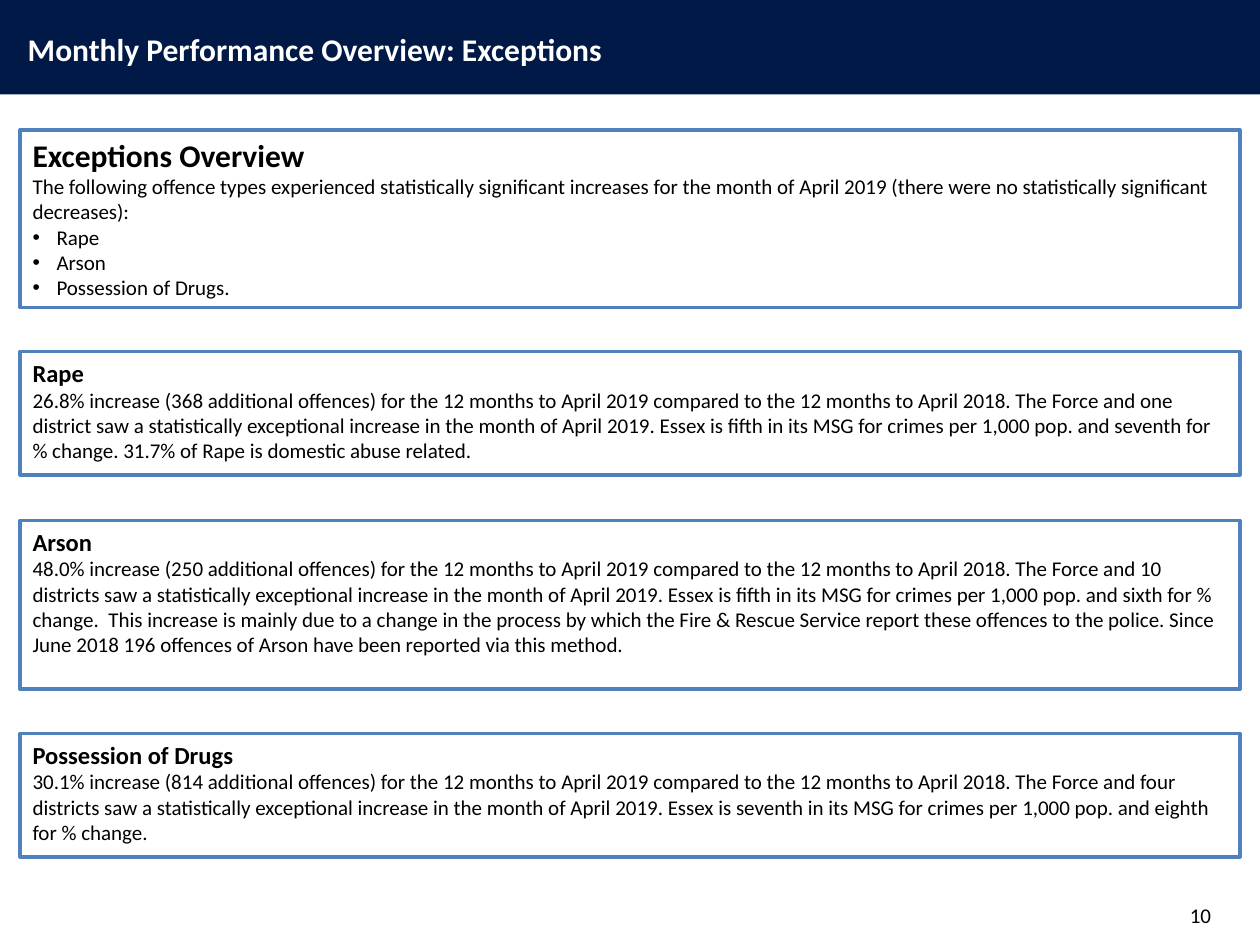
"""Build the monthly performance exceptions slide."""
from lxml import etree
from pptx import Presentation
from pptx import util as u
from pptx.dml.color import RGBColor
from pptx.enum import shapes, text
from pptx.oxml.ns import qn


def color(value):
    return RGBColor.from_string(value)


def write(p, words, size, bold=False, ink="000000", align=text.PP_ALIGN.LEFT):
    p.text = words
    p.alignment = align
    p.font.name = "Calibri"
    p.font.size = u.Pt(size)
    p.font.bold = bold
    p.font.color.rgb = color(ink)


prs = Presentation()
prs.slide_width, prs.slide_height = u.Inches(10), u.Inches(7.5)
s = prs.slides.add_slide(prs.slide_layouts[5])

band = s.shapes.add_shape(shapes.MSO_SHAPE.RECTANGLE, 0, 0, prs.slide_width, u.Inches(0.75))
band.shadow.inherit = False
band.fill.solid()
band.fill.fore_color.rgb = color("001947")
band.line.fill.background()
s.shapes._spTree.insert(2, band._element)

title = s.shapes.title
title.left, title.top = u.Inches(0.12), u.Inches(0.19)
title.width, title.height = u.Inches(7.87), u.Inches(0.4)
tf = title.text_frame
tf.auto_size = text.MSO_AUTO_SIZE.NONE
tf.vertical_anchor = text.MSO_ANCHOR.TOP
write(tf.paragraphs[0], "Monthly Performance Overview: Exceptions", 18, True, "FFFFFF")

compared = "for the 12 months to April 2019 compared to the 12 months to April 2018. The Force and"
saw = "saw a statistically exceptional increase in the month of April 2019. Essex is"
rate = "in its MSG for crimes per 1,000 pop. and"
sections = [
    (1.03, 1.41, "Exceptions Overview", 18,
     "The following offence types experienced statistically significant increases for the month "
     "of April 2019 (there were no statistically significant decreases):",
     ["Rape", "Arson", "Possession of Drugs."]),
    (2.79, 0.98, "Rape", 14,
     f"26.8% increase (368 additional offences) {compared} one district {saw} fifth {rate} "
     "seventh for % change. 31.7% of Rape is domestic abuse related.", []),
    (4.13, 1.34, "Arson", 14,
     f"48.0% increase (250 additional offences) {compared} 10 districts {saw} fifth {rate} "
     "sixth for % change.  This increase is mainly due to a change in the process by which the "
     "Fire & Rescue Service report these offences to the police. Since June 2018 196 offences "
     "of Arson have been reported via this method.", []),
    (5.82, 0.98, "Possession of Drugs", 14,
     f"30.1% increase (814 additional offences) {compared} four districts {saw} seventh {rate} "
     "eighth for % change.", []),
]
for top, height, heading, size, body, bullets in sections:
    sp = s.shapes.add_shape(shapes.MSO_SHAPE.RECTANGLE, u.Inches(0.16), u.Inches(top),
                            u.Inches(9.68), u.Inches(height))
    sp.shadow.inherit = False
    sp.fill.solid()
    sp.fill.fore_color.rgb = color("FFFFFF")
    sp.line.color.rgb = color("4F81BD")
    sp.line.width = u.Pt(2)
    tf = sp.text_frame
    tf.word_wrap = True
    tf.vertical_anchor = text.MSO_ANCHOR.TOP
    write(tf.paragraphs[0], heading, size, True)
    write(tf.add_paragraph(), body, 12)
    for item in bullets:
        p = tf.add_paragraph()
        write(p, item, 12)
        pPr = p._p.get_or_add_pPr()
        pPr.set("marL", str(u.Inches(0.19)))
        pPr.set("indent", str(-u.Inches(0.19)))
        bullet_font = etree.Element(qn("a:buFont"), typeface="Arial")
        bullet = etree.Element(qn("a:buChar"), char="•")
        pPr.insert(0, bullet_font)
        pPr.insert(1, bullet)

number = s.shapes.add_textbox(u.Inches(7.38), u.Inches(7.06), u.Inches(2.33), u.Inches(0.4))
tf = number.text_frame
tf.word_wrap = True
tf.vertical_anchor = text.MSO_ANCHOR.MIDDLE
write(tf.paragraphs[0], "10", 12, align=text.PP_ALIGN.RIGHT)

prs.save("out.pptx")
